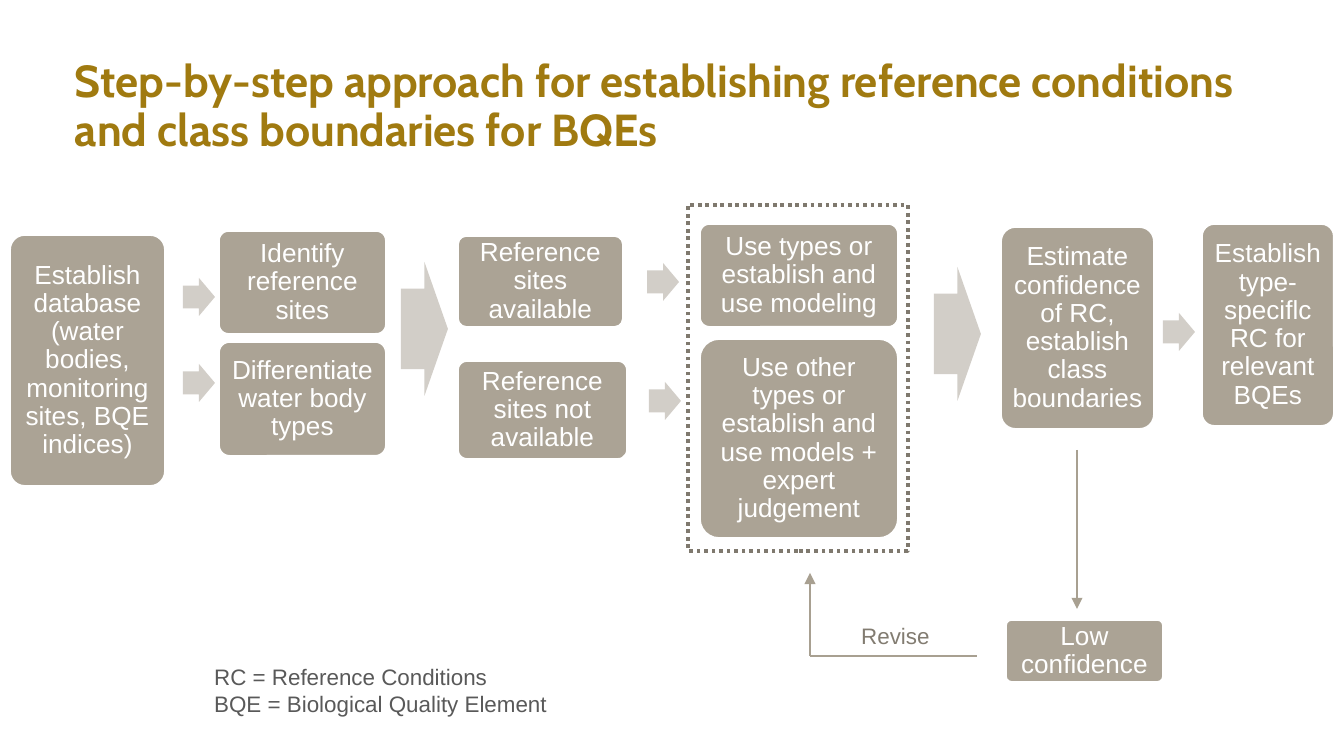
from lxml import etree
from pptx import Presentation
from pptx.dml.color import RGBColor
from pptx.enum.dml import MSO_LINE
from pptx.enum.shapes import MSO_CONNECTOR, MSO_SHAPE
from pptx.enum.text import MSO_ANCHOR, PP_ALIGN
from pptx.oxml.ns import qn
from pptx.util import Pt

ROUNDED, ARROW, RECT = MSO_SHAPE.ROUNDED_RECTANGLE, MSO_SHAPE.RIGHT_ARROW, MSO_SHAPE.RECTANGLE
STRAIGHT, DOTTED = MSO_CONNECTOR.STRAIGHT, MSO_LINE.ROUND_DOT
TOP, MIDDLE = MSO_ANCHOR.TOP, MSO_ANCHOR.MIDDLE
LEFT, CENTER = PP_ALIGN.LEFT, PP_ALIGN.CENTER

WHITE = RGBColor(0xFF, 0xFF, 0xFF)
GOLD = RGBColor(0xA0, 0x7A, 0x10)
TAUPE = RGBColor(0xAB, 0xA3, 0x95)
PALE = RGBColor(0xD2, 0xCE, 0xC8)
LINE = RGBColor(0xA8, 0xA0, 0x91)
FRAME = RGBColor(0x7F, 0x79, 0x6E)
LABEL = RGBColor(0x82, 0x7C, 0x71)
GREY = RGBColor(0x59, 0x59, 0x59)

TITLE = "Step-by-step approach for establishing reference conditions and class boundaries for BQEs"
STEPS = [
    ("Establish database (water bodies, monitoring sites, BQE indices)", (9, 234, 157, 253)),
    ("Identify reference sites", (218, 230, 169, 105)),
    ("Differentiate water body types", (218, 341, 169, 116)),
    ("Reference sites available", (457, 235, 167, 93)),
    ("Reference sites not available", (457, 360, 171, 100)),
    ("Use types or establish and use modeling", (699, 223, 200, 105)),
    ("Use other types or establish and use models + expert judgement", (699, 338, 200, 201)),
    ("Estimate confidence of RC, establish class boundaries", (1000, 226, 155, 204)),
    ("Establish type-speciflc RC for relevant BQEs", (1201, 223, 134, 204)),
    ("Low confidence", (1005, 619, 159, 64)),
]
ARROWS = [
    ((32, 38), [(183, 278), (183, 364), (647, 263), (649, 382), (1163, 313)]),
    ((47, 134), [(401, 262), (934, 267)]),
]
LINES = [
    ((1077, 450), (1077, 609), True),
    ((810, 656), (810, 573), True),
    ((977, 656), (810, 656), False),
]
LEGEND = ["RC = Reference Conditions", "BQE = Biological Quality Element"]

SCALE = 914400 / 134.4
CORNER = 0.1


def px(*values):
    return [round(v * SCALE) for v in values]


def write(tf, lines, size=12, font="Arial", color=GREY, bold=False, align=LEFT,
          anchor=TOP, spacing=None, inset=None, wrap=True):
    tf.word_wrap = wrap
    tf.vertical_anchor = anchor
    if inset is not None:
        tf.margin_left = tf.margin_top = tf.margin_right = tf.margin_bottom = px(inset)[0]
    for i, line in enumerate(lines):
        p = tf.add_paragraph() if i else tf.paragraphs[0]
        p.alignment = align
        p.line_spacing = spacing
        r = p.add_run()
        r.text = line
        r.font.size, r.font.name, r.font.bold = Pt(size), font, bold
        r.font.color.rgb = color


def add_shape(kind, box, fill=None, line=None):
    sp = s.shapes.add_shape(kind, *px(*box))
    sp.shadow.inherit = False
    if fill is None:
        sp.fill.background()
    else:
        sp.fill.solid()
        sp.fill.fore_color.rgb = fill
    if line is None:
        sp.line.fill.background()
    else:
        sp.line.color.rgb = line
        sp.line.width = Pt(2)
    return sp


def add_line(start, end, arrow):
    c = s.shapes.add_connector(STRAIGHT, *px(*start, *end))
    c.line.color.rgb = LINE
    c.line.width = Pt(0.75)
    if arrow:
        etree.SubElement(c.line._get_or_add_ln(), qn("a:tailEnd"), type="triangle")
    etree.SubElement(c._element.spPr, qn("a:effectLst"))


prs = Presentation()
prs.slide_width, prs.slide_height = px(1344, 756)
s = prs.slides.add_slide(prs.slide_layouts[5])

title = s.shapes.title
title.left, title.top, title.width, title.height = px(75, 58, 1211, 117)
write(title.text_frame, [TITLE], size=24, font="Cabin", color=GOLD, bold=True,
      spacing=Pt(26), inset=0)

for text, box in STEPS:
    sp = add_shape(ROUNDED, box, TAUPE, WHITE)
    sp.adjustments[0] = CORNER
    corner_inset = 0.29 * CORNER * min(box[2:])
    write(sp.text_frame, [text], size=14, color=WHITE, align=CENTER, anchor=MIDDLE,
          spacing=0.9, inset=12 - corner_inset)

for size, places in ARROWS:
    for place in places:
        sp = add_shape(ARROW, place + size, PALE)
        sp.adjustments[0], sp.adjustments[1] = 0.6, 0.5

for start, end, arrow in LINES:
    add_line(start, end, arrow)

frame = add_shape(RECT, (688, 205, 220, 346), line=FRAME)
frame.line.dash_style = DOTTED

revise = s.shapes.add_textbox(*px(848, 616, 95, 40))
write(revise.text_frame, ["Revise"], color=LABEL, wrap=False)
legend = s.shapes.add_textbox(*px(201, 657, 519, 68))
write(legend.text_frame, LEGEND)

prs.save("out.pptx")
